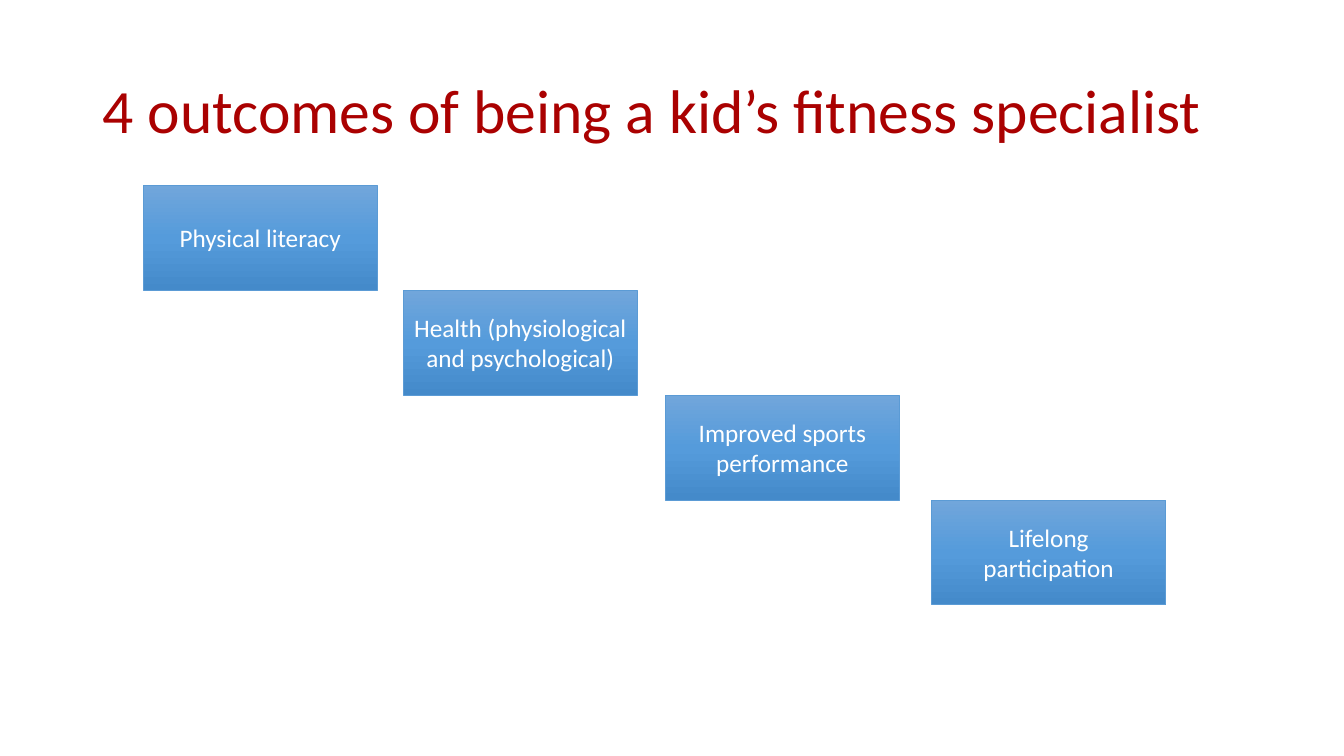
from copy import deepcopy
from dataclasses import dataclass

from pptx import Presentation
from pptx.dml.color import RGBColor
from pptx.enum.shapes import MSO_SHAPE
from pptx.enum.text import MSO_ANCHOR, PP_ALIGN
from pptx.oxml.ns import qn
from pptx.util import Inches, Pt


@dataclass(frozen=True)
class Theme:
    font: str = "Calibri"
    title: str = "AA0101"
    label: str = "FFFFFF"
    edge: str = "5B9BD5"
    shades: tuple = ("71A6DB", "559BDB", "448ACA")
    title_size: int = 44
    label_size: int = 18


THEME = Theme()
TITLE = "4 outcomes of being a kid’s fitness specialist"
# Label and left offset of each step
STEPS = [
    ("Physical literacy", 0),
    ("Health (physiological and psychological)", 2.58),
    ("Improved sports performance", 5.18),
    ("Lifelong participation", 7.82),
]


def write(shape, text, size, color, align=PP_ALIGN.LEFT, spacing=None):
    frame = shape.text_frame
    frame.word_wrap = True
    frame.vertical_anchor = MSO_ANCHOR.MIDDLE
    para = frame.paragraphs[0]
    para.alignment = align
    para.line_spacing = spacing
    run = para.add_run()
    run.text = text
    run.font.name = THEME.font
    run.font.size = Pt(size)
    run.font.color.rgb = RGBColor.from_string(color)


def shade(shape):
    """Fill a shape with the three theme shades, top to bottom."""
    fill = shape.fill
    fill.gradient()
    fill.gradient_angle = 270
    # Add a middle stop to the two given ones
    stops = shape.element.spPr.find(".//" + qn("a:gsLst"))
    stops.insert(1, deepcopy(stops[0]))
    for stop, color, place in zip(fill.gradient_stops, THEME.shades, (0, 0.5, 1)):
        stop.color.rgb = RGBColor.from_string(color)
        stop.position = place


def add_title(slide, left, top, width, height):
    box = slide.shapes.add_textbox(
        Inches(left), Inches(top), Inches(width), Inches(height))
    write(box, TITLE, THEME.title_size, THEME.title, spacing=0.9)


def add_stairs(slide, left, top, width, height):
    """Place the steps so that each starts where the last one ends."""
    rise = height / len(STEPS)
    run = width - STEPS[-1][1]
    for row, (text, shift) in enumerate(STEPS):
        step = slide.shapes.add_shape(
            MSO_SHAPE.RECTANGLE, Inches(left + shift), Inches(top + row * rise),
            Inches(run), Inches(rise))
        step.shadow.inherit = False
        shade(step)
        step.line.color.rgb = RGBColor.from_string(THEME.edge)
        step.line.width = Pt(0.5)
        write(step, text, THEME.label_size, THEME.label, PP_ALIGN.CENTER)


def main():
    deck = Presentation()
    deck.slide_width, deck.slide_height = Inches(13.33), Inches(7.5)
    slide = deck.slides.add_slide(deck.slide_layouts[6])
    add_title(slide, 0.92, 0.4, 11.5, 1.45)
    add_stairs(slide, 1.42, 1.84, 10.14, 4.16)
    deck.save("out.pptx")


if __name__ == "__main__":
    main()
